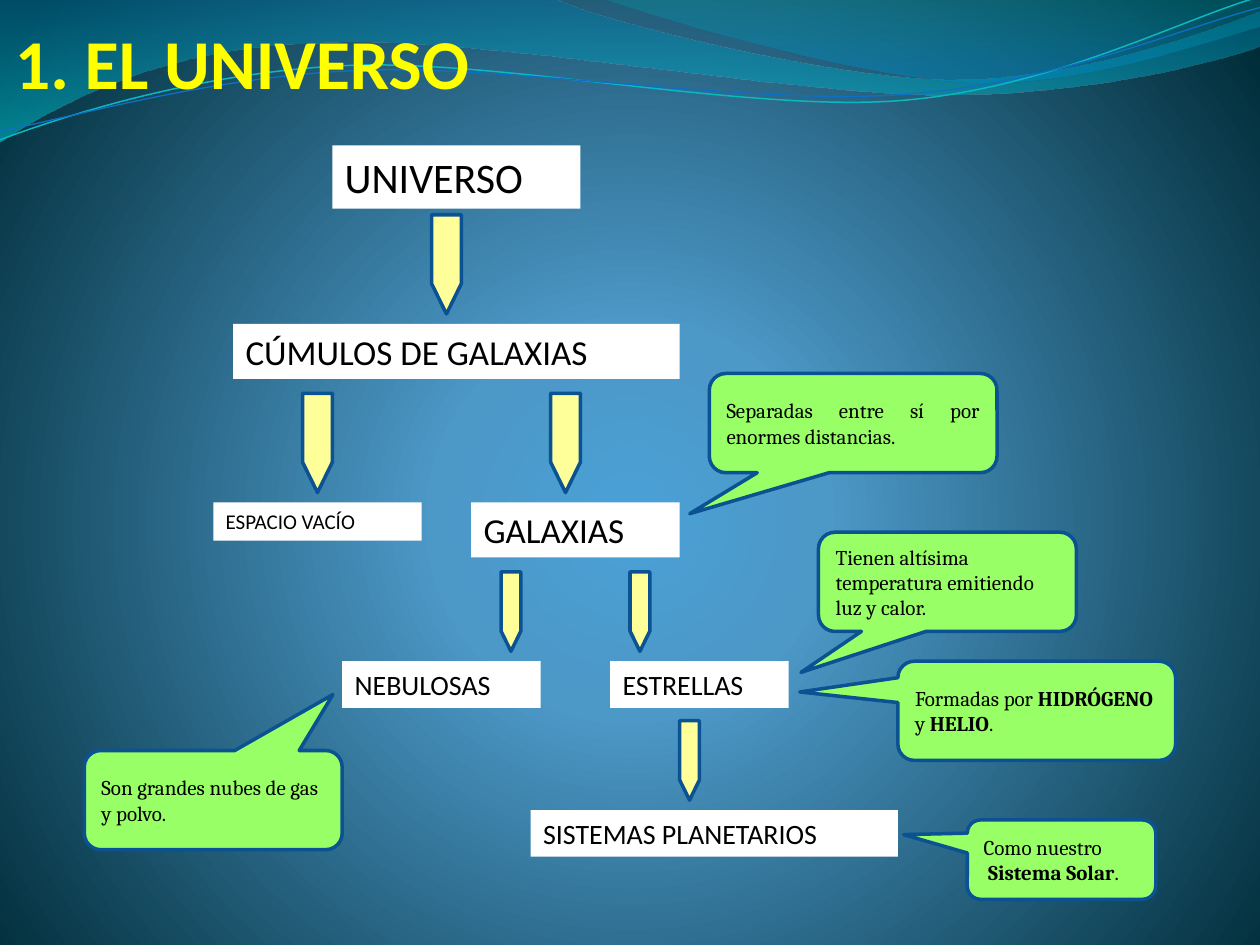
from dataclasses import dataclass

from lxml import etree
from pptx import Presentation
from pptx import util as u
from pptx.dml.color import RGBColor
from pptx.enum import shapes, text
from pptx.oxml import ns

KIND = shapes.MSO_SHAPE
ALIGN = text.PP_ALIGN


@dataclass(frozen=True)
class Theme:
    sans: str = "Calibri"
    serif: str = "Cambria"
    ink: str = "000000"
    gold: str = "FFFF00"
    card: str = "FFFFFF"
    arrow: str = "FFFF99"
    note: str = "99FF66"
    edge: str = "0B5292"
    head: int = 40
    small: int = 12
    stroke: float = 2
    back: tuple = ((0, "4AA0D6", 100), (25, "4C98C7", 100), (100, "002C38", 100))
    wide: tuple = ((0, "0074A1", 45), (100, "00C6CF", 55))
    crest: tuple = ((0, "00A1A9", 30), (80, "008BBF", 45))
    lines: tuple = (("0AB8BF", 0.85), ("0F6FC6", 0.75))


T = Theme()

# Wave outlines in tenths of the box width: a pair is a corner, six numbers a curve
WIDE = [(0, 0), (4.4, -0.01), (4.76, 0.17, 6.64, 0.63, 7.58, 0.63),
        (8.53, 0.63, 9.58, 0.26, 10, 0.09), (10.01, 0.36),
        (9.83, 0.44, 8.7, 0.76, 7.46, 0.75), (6.22, 0.75, 3.82, 0.28, 2.57, 0.34),
        (1.29, 0.36, 0.46, 0.83, -0.01, 1.13), (0, 0)]
CREST = [(4.79, -0.01), (5.09, 0.11, 6.82, 0.62, 7.69, 0.65),
         (8.56, 0.69, 9.61, 0.32, 10, 0.21), (10, 0), (4.79, -0.01)]
LINES = [
    [(0, 1.11), (0.48, 0.93, 1.58, 0.57, 2.77, 0.52),
     (3.95, 0.47, 5.93, 0.89, 7.13, 0.8), (8.33, 0.71, 9.38, 0.15, 9.98, -0.02)],
    [(0, 1.04), (0.47, 0.96, 1.64, 0.61, 2.83, 0.56),
     (4.03, 0.51, 5.97, 0.84, 7.17, 0.75), (8.36, 0.67, 9.41, 0.21, 10, 0.06)],
]

# Cards: x, y, width, type size, label
CARDS = [
    (2.4, 0, 5, 24, "UNIVERSO"),
    (0.4, 3.6, 9, 20, "CÚMULOS DE GALAXIAS"),
    (0, 7.2, 4.2, 12, "ESPACIO VACÍO"),
    (5.2, 7.2, 4.2, 20, "GALAXIAS"),
    (2.6, 10.4, 4, 16, "NEBULOSAS"),
    (8, 10.4, 3.6, 16, "ESTRELLAS"),
    (6.4, 13.4, 7.4, 16, "SISTEMAS PLANETARIOS"),
]
TALL = {24: 1.28, 20: 1.11, 16: 0.94, 12: 0.77}

# Arrows: middle x, top, length, width
ARROWS = [(4.7, 1.4, 2, 0.6), (2.1, 5, 2, 0.6), (7.1, 5, 2, 0.6),
          (6, 8.6, 1.6, 0.4), (8.6, 8.6, 1.6, 0.4), (9.6, 11.6, 1.6, 0.4)]

# Notes: x, y, width, height, tail, alignment, paragraphs of (words, bold)
NOTES = [
    (12.6, 0, 5.8, 2, (-0.568, 0.913), ALIGN.JUSTIFY,
     [[("Separadas entre sí por enormes distancias.", False)]]),
    (14.8, 3.2, 5.2, 2, (-0.568, 0.913), ALIGN.LEFT,
     [[("Tienen altísima temperatura emitiendo luz y calor.", False)]]),
    (16.4, 5.8, 5.6, 2, (-0.853, -0.19), ALIGN.LEFT,
     [[("Formadas por ", False), ("HIDRÓGENO", True), (" y ", False),
       ("HELIO", True), (".", False)]]),
    (0, 7.6, 5.2, 2, (0.464, -1.064), ALIGN.LEFT,
     [[("Son grandes nubes de gas y polvo.", False)]]),
    (17.8, 9, 3.8, 1.6, (-0.838, -0.315), ALIGN.LEFT,
     [[("Como nuestro", False)],
      [(" ", False), ("Sistema Solar", True), (".", False)]]),
]


def rgb(code):
    return RGBColor.from_string(code)


def add(top, tag, **attrs):
    return etree.SubElement(top, ns.qn(tag), {k: str(v) for k, v in attrs.items()})


def blend(fill, root, stops, focus=None):
    """Give a fill its gradient: top to bottom, or round a focus."""
    fill.gradient()
    grad = root.find(".//" + ns.qn("a:gradFill"))
    for kid in list(grad):
        grad.remove(kid)
    rows = add(grad, "a:gsLst")
    for pos, code, alpha in stops:
        tone = add(add(rows, "a:gs", pos=pos * 1000), "a:srgbClr", val=code)
        if alpha < 100:
            add(tone, "a:alpha", val=alpha * 1000)
    if focus:
        ring = add(grad, "a:path", path="circle")
        add(ring, "a:fillToRect", **{k: v * 1000 for k, v in zip("ltrb", focus)})
    else:
        add(grad, "a:lin", ang=5400000, scaled=1)


def outline(slide, segs, x, y, unit, close):
    """Build a freeform from its corners, then bend the curved sides."""
    ends = [(seg[-2] * unit, seg[-1] * unit) for seg in segs]
    pen = slide.shapes.build_freeform(*ends[0])
    pen.add_line_segments(ends[1:], close=close)
    shape = pen.convert_to_shape(u.Cm(x), u.Cm(y))
    shape.shadow.inherit = False
    left, top = (min(axis) for axis in zip(*ends))
    sides = list(shape.element.iter(ns.qn("a:lnTo")))
    for side, seg in zip(sides, segs[1:]):
        if len(seg) == 6:
            curve = etree.Element(ns.qn("a:cubicBezTo"))
            for px, py in zip(seg[::2], seg[1::2]):
                add(curve, "a:pt", x=round(px * unit - left), y=round(py * unit - top))
            side.getparent().replace(side, curve)
    return shape


def write(par, words, size, font, color, bold=False):
    run = par.add_run()
    run.text = words
    run.font.size, run.font.name, run.font.bold = u.Pt(size), font, bold
    run.font.color.rgb = rgb(color)


def block(home, kind, x, y, w, h, fill, edge=None):
    """Add a flat preset shape, measured in centimetres."""
    shape = home.add_shape(kind, u.Cm(x), u.Cm(y), u.Cm(w), u.Cm(h))
    shape.shadow.inherit = False
    shape.fill.solid()
    shape.fill.fore_color.rgb = rgb(fill)
    if edge:
        shape.line.color.rgb = rgb(edge)
        shape.line.width = u.Pt(T.stroke)
    else:
        shape.line.fill.background()
    return shape


def wave(slide, x, y, w):
    unit = u.Cm(w) / 10
    # Filled bands
    for segs, stops in ((WIDE, T.wide), (CREST, T.crest)):
        band = outline(slide, segs, x, y, unit, True)
        blend(band.fill, band.element.spPr, stops)
        band.line.fill.background()
    # Thin lines
    for segs, (color, width) in zip(LINES, T.lines):
        line = outline(slide, segs, x, y, unit, False)
        line.fill.background()
        line.line.color.rgb = rgb(color)
        line.line.width = u.Pt(width)


def head(slide, x, y, w, h):
    title = slide.shapes.title
    title.element.getparent().append(title.element)  # in front of the waves
    title.left, title.top, title.width, title.height = map(u.Cm, (x, y, w, h))
    frame = title.text_frame
    frame.auto_size = text.MSO_AUTO_SIZE.NONE
    frame.vertical_anchor = text.MSO_ANCHOR.BOTTOM
    frame.margin_left = frame.margin_top = frame.margin_bottom = 0
    frame.margin_right = u.Cm(0.05)
    par = frame.paragraphs[0]
    par.alignment = ALIGN.JUSTIFY
    write(par, "1. EL UNIVERSO", T.head, T.sans, T.gold, True)


def tree(slide, x, y):
    home = slide.shapes.add_group_shape().shapes
    # Cards
    for cx, cy, w, size, label in CARDS:
        card = block(home, KIND.RECTANGLE, x + cx, y + cy, w, TALL[size], T.card)
        frame = card.text_frame
        frame.word_wrap = True
        frame.auto_size = text.MSO_AUTO_SIZE.SHAPE_TO_FIT_TEXT
        frame.vertical_anchor = text.MSO_ANCHOR.TOP
        frame.paragraphs[0].alignment = ALIGN.LEFT
        write(frame.paragraphs[0], label, size, T.sans, T.ink)
    # Arrows, turned to point down
    for mid, top, long, wide in ARROWS:
        arrow = block(home, KIND.PENTAGON, x + mid - long / 2,
                      y + top + (long - wide) / 2, long, wide, T.arrow, T.edge)
        arrow.adjustments[0] = 1.02
        arrow.rotation = 90


def notes(slide, x, y):
    for nx, ny, w, h, tail, align, pars in NOTES:
        note = block(slide.shapes, KIND.ROUNDED_RECTANGULAR_CALLOUT,
                     x + nx, y + ny, w, h, T.note, T.edge)
        note.adjustments[0], note.adjustments[1] = tail
        frame = note.text_frame
        frame.word_wrap = True
        frame.vertical_anchor = text.MSO_ANCHOR.MIDDLE
        for i, runs in enumerate(pars):
            par = frame.add_paragraph() if i else frame.paragraphs[0]
            par.alignment = align
            for words, bold in runs:
                write(par, words, T.small, T.serif, T.ink, bold)


def main():
    deck = Presentation()
    deck.slide_width, deck.slide_height = u.Cm(25.4), u.Cm(19.05)
    slide = deck.slides.add_slide(deck.slide_layouts[5])
    blend(slide.background.fill, slide.element, T.back, (10, 110, 10, 100))
    wave(slide, 0, 0, 25.4)
    head(slide, 0.3, 0.33, 10, 1.75)
    tree(slide, 4.3, 2.93)
    notes(slide, 1.7, 7.53)
    deck.save("out.pptx")


if __name__ == "__main__":
    main()
